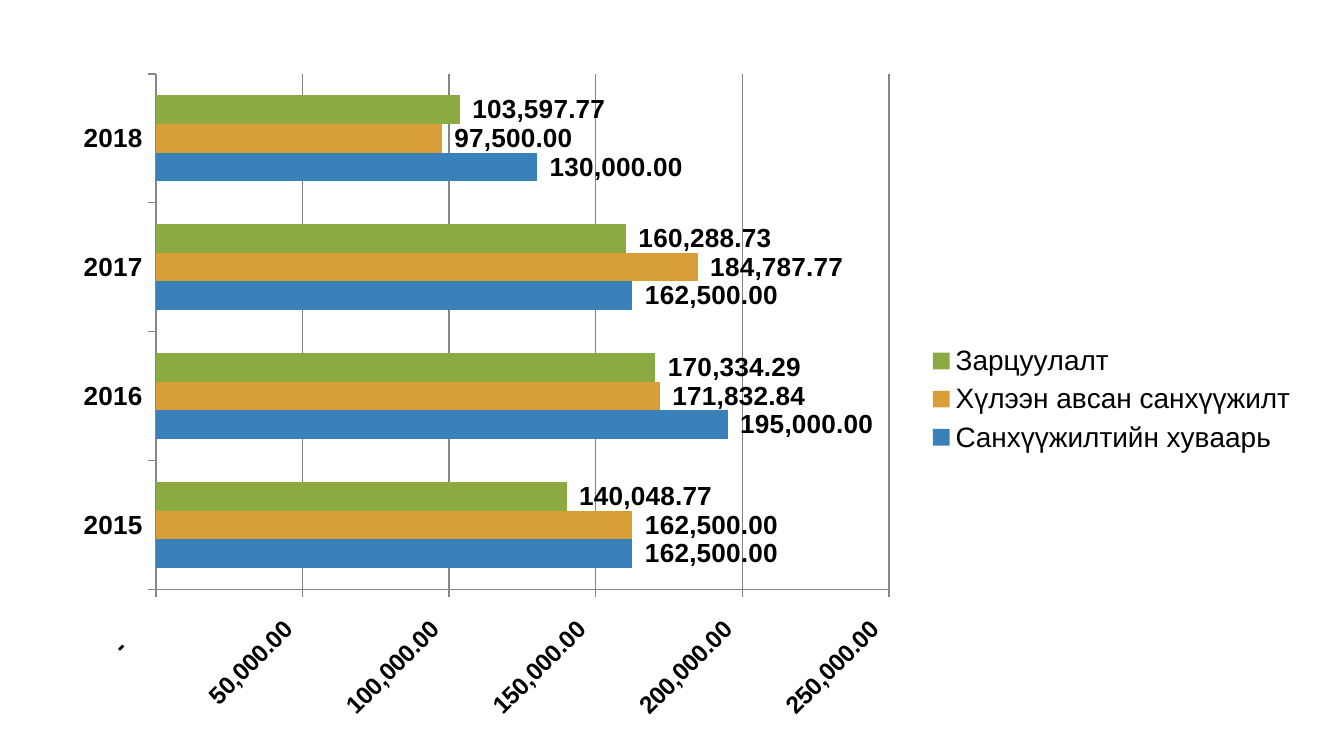
from lxml import etree
from pptx import Presentation
from pptx.chart.data import CategoryChartData
from pptx.dml.color import RGBColor
from pptx.enum.chart import XL_CHART_TYPE, XL_LABEL_POSITION, XL_LEGEND_POSITION, XL_TICK_MARK
from pptx.oxml.ns import qn
from pptx.util import Inches, Pt

BAR_CLUSTERED = XL_CHART_TYPE.BAR_CLUSTERED
OUTSIDE_END = XL_LABEL_POSITION.OUTSIDE_END
RIGHT = XL_LEGEND_POSITION.RIGHT
TICK_OUT, TICK_NONE = XL_TICK_MARK.OUTSIDE, XL_TICK_MARK.NONE

COLORS = {
    "text": "000000",
    "grid": "868686",
    "allocation": "3A81BA",
    "received": "D89F39",
    "spent": "8BAB42",
}
AMOUNT_FORMAT = '_-* #,##0.00_₮_-;\\-* #,##0.00_₮_-;_-* "-"??_₮_-;_-@_-'
YEARS = ["2015", "2016", "2017", "2018"]
FUNDING = [
    ("Санхүүжилтийн хуваарь ", "allocation", [162500, 195000, 162500, 130000]),
    ("Хүлээн авсан санхүүжилт ", "received", [162500, 171832.84, 184787.77, 97500]),
    ("Зарцуулалт ", "spent", [140048.77, 170334.29, 160288.73, 103597.77]),
]


class FundingSlide:
    """Holds the style and the current slide, and draws the funding chart."""

    def __init__(self, prs, font="Arial"):
        self.width, self.height = prs.slide_width, prs.slide_height
        self.font = font
        self.slide = prs.slides.add_slide(prs.slide_layouts[6])

    def color(self, name):
        return RGBColor.from_string(COLORS[name])

    def format_font(self, font, size, bold=False):
        font.name, font.size, font.bold = self.font, Pt(size), bold
        font.color.rgb = self.color("text")

    def place(self, part, index, inner=False, **shares):
        for old in part.findall(qn("c:layout")):
            part.remove(old)
        layout = etree.Element(qn("c:layout"))
        manual = etree.SubElement(layout, qn("c:manualLayout"))
        settings = {"layoutTarget": "inner"} if inner else {}
        settings |= {"xMode": "edge", "yMode": "edge"} | shares
        for tag, value in settings.items():
            etree.SubElement(manual, qn(f"c:{tag}")).set("val", str(value))
        part.insert(index, layout)

    def axis(self, axis, size):
        axis.major_tick_mark, axis.minor_tick_mark = TICK_OUT, TICK_NONE
        axis.format.line.color.rgb = self.color("grid")
        axis.format.line.width = Pt(0.75)
        self.format_font(axis.tick_labels.font, size, bold=True)

    def amount_axis(self, axis, size, top, step):
        self.axis(axis, size)
        axis.minimum_scale, axis.maximum_scale, axis.major_unit = 0, top, step
        axis.has_major_gridlines = True
        axis.major_gridlines.format.line.color.rgb = self.color("grid")
        axis.major_gridlines.format.line.width = Pt(0.75)
        axis.tick_labels.number_format = AMOUNT_FORMAT
        axis.tick_labels.number_format_is_linked = False
        axis._element.find(qn("c:txPr")).find(qn("a:bodyPr")).set("rot", "-2700000")

    def series(self, series, color):
        series.format.fill.solid()
        series.format.fill.fore_color.rgb = self.color(color)
        series.invert_if_negative = False
        labels = series.data_labels
        labels.show_value = True
        labels.position = OUTSIDE_END
        labels.number_format, labels.number_format_is_linked = AMOUNT_FORMAT, False
        self.format_font(labels.font, 14, bold=True)

    def legend(self, chart, size):
        chart.has_legend = True
        chart.legend.position = RIGHT
        chart.legend.include_in_layout = False
        self.format_font(chart.legend.font, size)
        self.place(chart.legend._element, 1, x=0.69, y=0.41, w=0.3, h=0.18)

    def bar_chart(self, left, top, width, height):
        data = CategoryChartData(number_format=AMOUNT_FORMAT)
        data.categories = YEARS
        for name, _, amounts in FUNDING:
            data.add_series(name, amounts)
        chart = self.slide.shapes.add_chart(
            BAR_CLUSTERED, int(left * self.width), int(top * self.height),
            int(width * self.width), int(height * self.height), data).chart
        chart.has_title = False
        self.format_font(chart.font, 10)
        plot = chart.plots[0]
        plot.gap_width, plot.overlap, plot.vary_by_categories = 150, 0, False
        for series, (_, color, _) in zip(plot.series, FUNDING):
            self.series(series, color)
        self.axis(chart.category_axis, 14)
        self.amount_axis(chart.value_axis, 13, top=250000, step=50000)
        self.legend(chart, 15)
        plot_area = chart._chartSpace.find(qn("c:chart")).find(qn("c:plotArea"))
        self.place(plot_area, 0, inner=True, x=0.078, y=0.02, w=0.582, h=0.761)


def main():
    prs = Presentation()
    prs.slide_width = Inches(10)
    prs.slide_height = prs.slide_width * 9 // 16
    FundingSlide(prs).bar_chart(left=0.043, top=0.08, width=0.937, height=0.896)
    prs.save("out.pptx")


if __name__ == "__main__":
    main()
